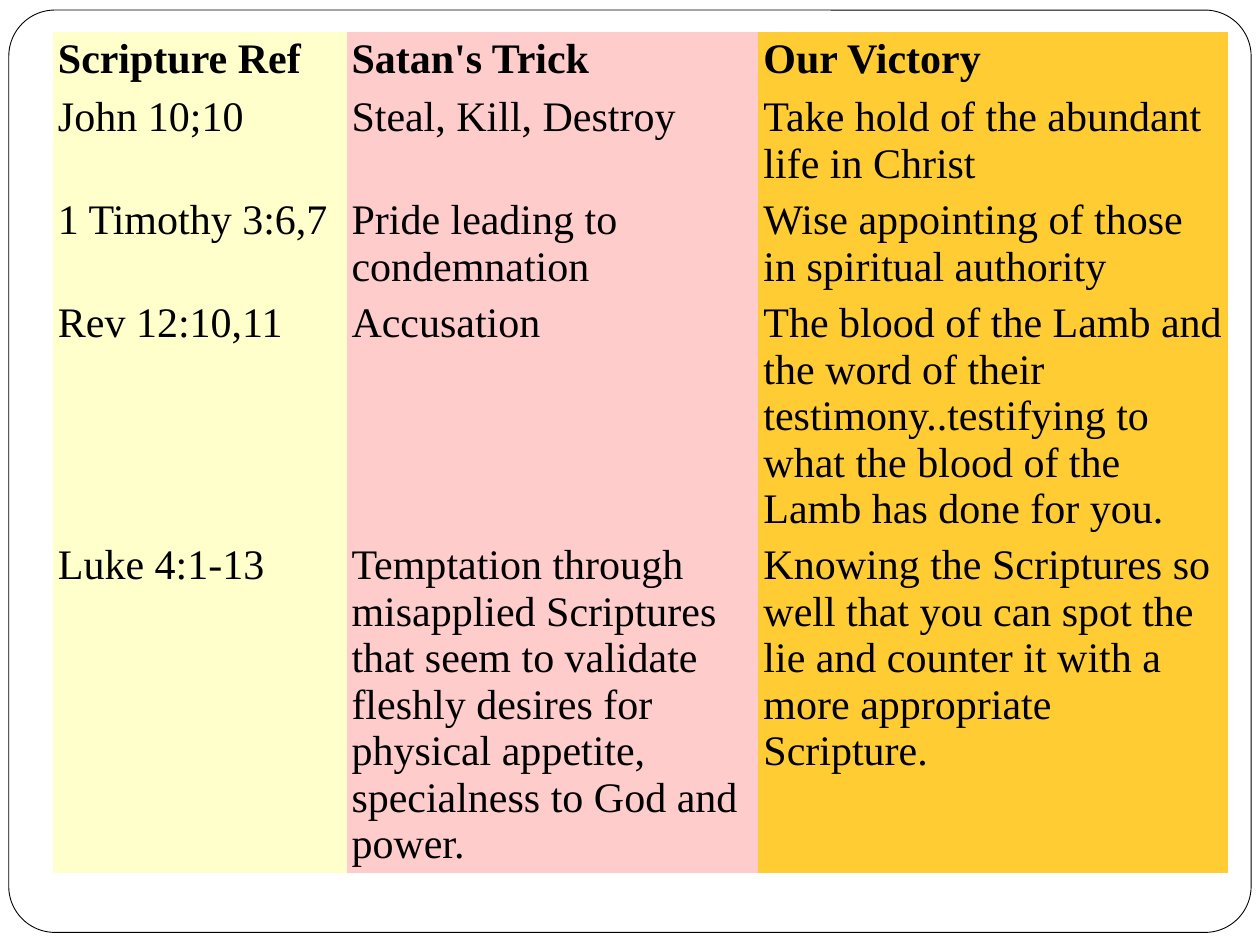
import pptx
import pptx.dml.color
import pptx.enum.shapes
import pptx.oxml.ns
import pptx.util

Inches = pptx.util.Inches
Pt = pptx.util.Pt

COLOURS = {
    "paper": "FFFFFF",
    "ink": "000000",
    "reference": "FFFFCC",
    "trick": "FFCCCC",
    "victory": "FFCC33",
}
NO_STYLE_NO_GRID = "{2D5ABB26-0587-4C30-8999-92F81FD0307C}"

COLUMNS = [("reference", 2.33), ("trick", 3.27), ("victory", 3.73)]
ROWS = [
    (0.46, ["Scripture Ref", "Satan's Trick", "Our Victory"]),
    (0.8, ["John 10;10", "Steal, Kill, Destroy",
           "Take hold of the abundant life in Christ"]),
    (0.8, ["1 Timothy 3:6,7", "Pride leading to condemnation",
           "Wise appointing of those in spiritual authority"]),
    (1.83, ["Rev 12:10,11", "Accusation",
            "The blood of the Lamb and the word of their testimony..testifying "
            "to what the blood of the Lamb has done for you."]),
    (2.52, ["Luke 4:1-13",
            "Temptation through misapplied Scriptures that seem to validate "
            "fleshly desires for physical appetite, specialness to God and power.",
            "Knowing the Scriptures so well that you can spot the lie and "
            "counter it with a more appropriate Scripture."]),
]
CELL_MARGINS = dict.fromkeys(
    ["margin_left", "margin_top", "margin_right", "margin_bottom"], Inches(0.04))
FONT_FORMAT = {"name": "Times New Roman", "size": Pt(24)}


def colour(name):
    return pptx.dml.color.RGBColor.from_string(COLOURS[name])


deck = pptx.Presentation()
deck.slide_width, deck.slide_height = Inches(10), Inches(7.5)
page = deck.slides.add_slide(deck.slide_layouts[6])

frame = page.shapes.add_shape(
    pptx.enum.shapes.MSO_SHAPE.ROUNDED_RECTANGLE,
    Inches(0.07), Inches(0.08), Inches(9.86), Inches(7.32))
frame.adjustments[0] = 0.05
frame.shadow.inherit = False
frame.fill.solid()
frame.fill.fore_color.rgb = colour("paper")
frame.line.color.rgb = colour("ink")
frame.line.width = Pt(0.5)

table = page.shapes.add_table(
    len(ROWS), len(COLUMNS), Inches(0.42), Inches(0.25),
    Inches(sum(width for _, width in COLUMNS)),
    Inches(sum(height for height, _ in ROWS))).table
table.first_row = table.horz_banding = False
style = table._tbl.tblPr.find(pptx.oxml.ns.qn("a:tableStyleId"))
style.text = NO_STYLE_NO_GRID

for column, (_, width) in zip(table.columns, COLUMNS):
    column.width = Inches(width)

for row_index, (height, texts) in enumerate(ROWS):
    table.rows[row_index].height = Inches(height)
    for column_index, text in enumerate(texts):
        cell = table.cell(row_index, column_index)
        for name, value in CELL_MARGINS.items():
            setattr(cell, name, value)
        cell.fill.solid()
        cell.fill.fore_color.rgb = colour(COLUMNS[column_index][0])
        span = cell.text_frame.paragraphs[0].add_run()
        span.text = text
        for name, value in FONT_FORMAT.items():
            setattr(span.font, name, value)
        span.font.bold = row_index == 0
        span.font.color.rgb = colour("ink")

deck.save("out.pptx")
